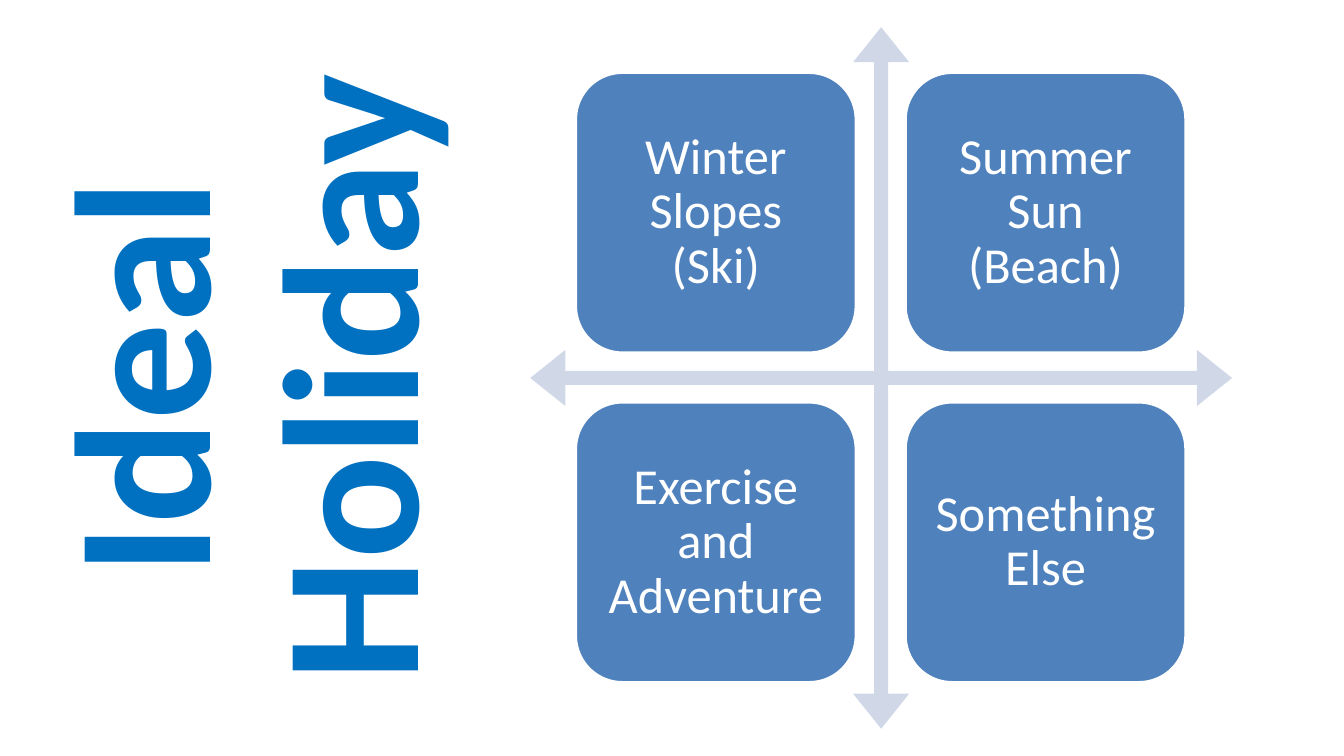
from pptx import Presentation
from pptx import util as u
from pptx.dml import color
from pptx.enum import shapes, text

# Content
TITLE = "Ideal Holiday"
QUADRANTS = [
    ["Winter Slopes\n(Ski)", "Summer Sun\n(Beach)"],
    ["Exercise and Adventure", "Something Else"],
]

# Layout in inches
TITLE_BOX = (-1.23, 1.61, 7.5, 4.28)
CROSS_LEFT, CROSS_TOP, CROSS_SIZE = 5.26, 0.27, 6.96
CROSS_ADJUSTMENTS = (0.02, 0.04, 0.05)
CARD_SIZE, CARD_MARGIN, CARD_STEP = 2.78, 0.45, 3.27

# Formats
TITLE_FONT = {"name": "Calibri", "size": u.Pt(138), "bold": True}
CARD_FONT = {"name": "Calibri", "size": u.Pt(36), "bold": False}
TITLE_FRAME = {"word_wrap": True,
               "auto_size": text.MSO_AUTO_SIZE.SHAPE_TO_FIT_TEXT}
CARD_FRAME = {"word_wrap": True, "vertical_anchor": text.MSO_ANCHOR.MIDDLE}
CARD_FRAME.update({f"margin_{side}": u.Inches(0.15)
                   for side in ("left", "top", "right", "bottom")})
PARAGRAPH = {"alignment": text.PP_ALIGN.CENTER, "line_spacing": 0.9}


def rgb(value):
    return color.RGBColor.from_string(value)


def apply(target, values):
    for name, value in values.items():
        setattr(target, name, value)


def write(shape, words, frame_format, font_format, font_color):
    frame = shape.text_frame
    apply(frame, frame_format)
    paragraph = frame.paragraphs[0]
    paragraph.text = words
    apply(paragraph, PARAGRAPH)
    for run in paragraph.runs:
        apply(run.font, font_format)
        run.font.color.rgb = rgb(font_color)


def add_filled(slide, kind, left, top, size, fill):
    shape = slide.shapes.add_shape(kind, *map(u.Inches, (left, top, size, size)))
    shape.shadow.inherit = False
    shape.fill.solid()
    shape.fill.fore_color.rgb = rgb(fill)
    shape.line.fill.background()
    return shape


def main():
    presentation = Presentation()
    presentation.slide_width = u.Inches(13.33)
    presentation.slide_height = u.Inches(7.5)
    slide = presentation.slides.add_slide(presentation.slide_layouts[6])

    # Title, turned to read upwards
    title = slide.shapes.add_textbox(*map(u.Inches, TITLE_BOX))
    title.rotation = 270
    write(title, TITLE, TITLE_FRAME, TITLE_FONT, "0070C0")

    # Crossed axes
    cross = add_filled(slide, shapes.MSO_SHAPE.QUAD_ARROW,
                       CROSS_LEFT, CROSS_TOP, CROSS_SIZE, "D0D8E8")
    for index, value in enumerate(CROSS_ADJUSTMENTS):
        cross.adjustments[index] = value

    # One card in each quadrant
    for row, labels in enumerate(QUADRANTS):
        for column, label in enumerate(labels):
            card = add_filled(slide, shapes.MSO_SHAPE.ROUNDED_RECTANGLE,
                              CROSS_LEFT + CARD_MARGIN + column * CARD_STEP,
                              CROSS_TOP + CARD_MARGIN + row * CARD_STEP,
                              CARD_SIZE, "4F81BD")
            card.line.color.rgb = rgb("FFFFFF")
            card.line.width = u.Pt(2)
            write(card, label, CARD_FRAME, CARD_FONT, "FFFFFF")

    presentation.save("out.pptx")


if __name__ == "__main__":
    main()
